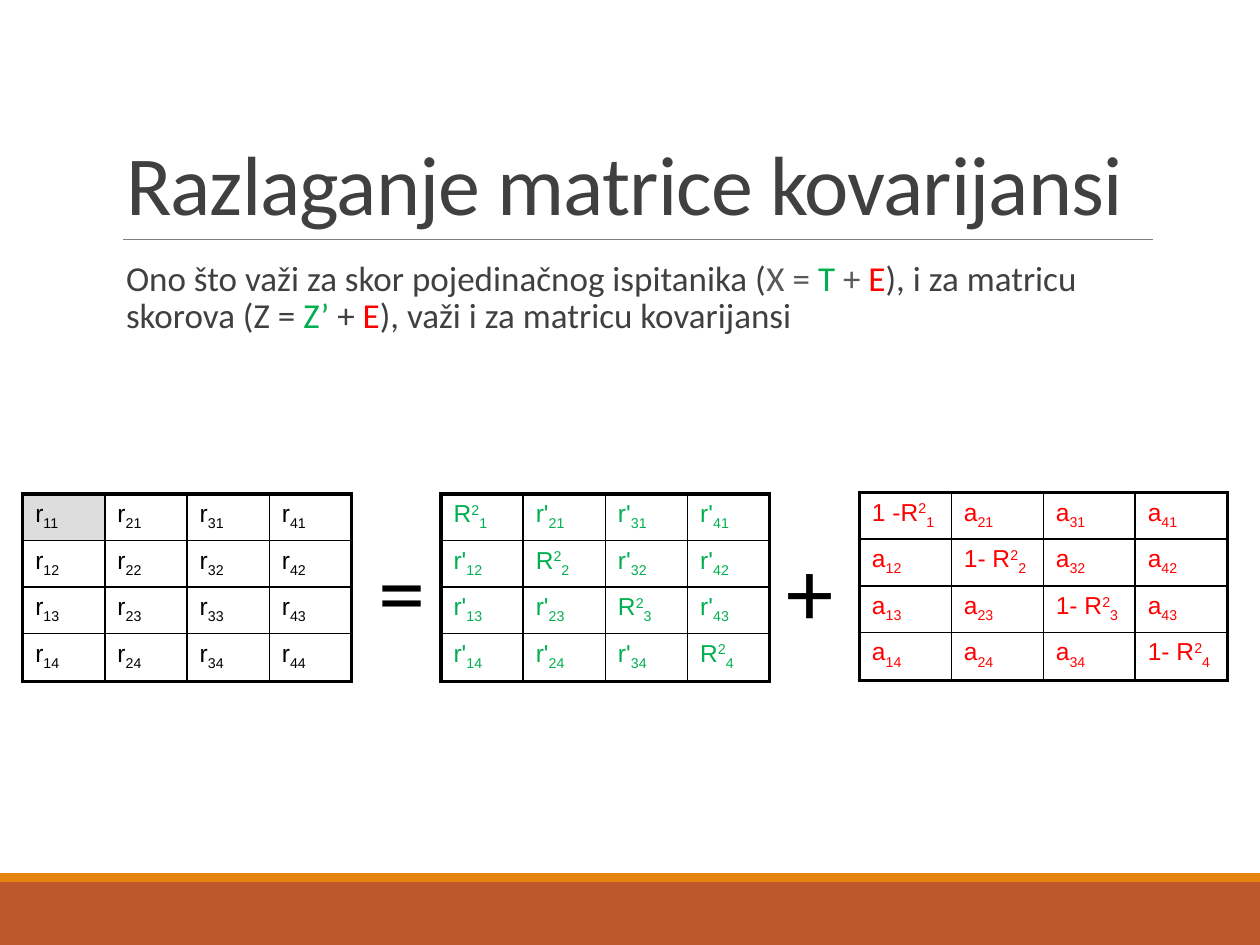
"""Build the slide on splitting a covariance matrix."""
from dataclasses import dataclass

from lxml.etree import SubElement
from pptx import Presentation
from pptx.dml.color import RGBColor
from pptx.enum.shapes import MSO_CONNECTOR, MSO_SHAPE
from pptx.enum.text import MSO_ANCHOR, MSO_AUTO_SIZE, PP_ALIGN
from pptx.oxml.ns import qn
from pptx.slide import Slide
from pptx.util import Inches, Pt


@dataclass(frozen=True)
class Theme:
    dark: str = "404040"
    gray: str = "595959"
    green: str = "00B050"
    red: str = "FF0000"
    black: str = "000000"
    shade: str = "DDDDDD"
    rule: str = "808080"
    rust: str = "BD582C"
    gold: str = "E48312"
    head: int = 48
    body: int = 20
    cell: int = 14
    sign: int = 54
    thin: float = 1
    thick: float = 2.25
    sans: str = "Calibri"
    grid: str = "Arial"


THEME = Theme()


@dataclass(frozen=True)
class Matrix:
    left: float
    top: float
    width: float
    stem: str
    square: str
    color: str
    shaded: bool = False


@dataclass(frozen=True)
class Sign:
    left: float
    text: str


@dataclass(frozen=True)
class Bar:
    top: float
    height: float
    color: str


SIZE = 4
ROWS = (0.37, 0.37, 0.37, 0.38)
GRIDS = (
    Matrix(0.18, 3.92, 2.61, "r", "", THEME.black, True),
    Matrix(3.5, 3.92, 2.61, "r'", "R", THEME.green),
    Matrix(6.82, 3.91, 2.92, "a", "1- R", THEME.red),
)
SIGNS = (Sign(2.9, "="), Sign(6.14, "+"))
BARS = (Bar(7, 0.5, THEME.rust), Bar(6.93, 0.07, THEME.gold))
TITLE = "Razlaganje matrice kovarijansi"
BODY = (
    ("Ono što važi za skor pojedinačnog ispitanika (", THEME.dark),
    ("X = ", THEME.gray),
    ("T", THEME.green),
    (" + ", THEME.gray),
    ("E", THEME.red),
    ("), i za matricu skorova (Z = ", THEME.dark),
    ("Z’ ", THEME.green),
    ("+ ", THEME.dark),
    ("E", THEME.red),
    ("), važi i za matricu kovarijansi", THEME.dark),
)


def apply(item, form: dict) -> None:
    """Set each format value on the item."""
    for name, value in form.items():
        setattr(item, name, value)


def place(shape, left: float, top: float, width: float, height: float) -> None:
    """Move and size a shape, in inches."""
    names = ("left", "top", "width", "height")
    apply(shape, dict(zip(names, map(Inches, (left, top, width, height)))))


def write(para, text: str, face: str, size: int, color: str, **marks: int) -> None:
    """Add a run with its font and any raw text marks."""
    run = para.add_run()
    run.text = text
    apply(run.font, {"name": face, "size": Pt(size), "bold": False})
    run.font.color.rgb = RGBColor.from_string(color)
    for name, value in marks.items():
        run._r.get_or_add_rPr().set(name, str(value))


def add_bar(slide: Slide, bar: Bar) -> None:
    """Draw a full-width footer bar."""
    shape = slide.shapes.add_shape(
        MSO_SHAPE.RECTANGLE, 0, Inches(bar.top), Inches(10), Inches(bar.height))
    shape.shadow.inherit = False
    shape.fill.solid()
    shape.fill.fore_color.rgb = RGBColor.from_string(bar.color)
    shape.line.fill.background()


def add_rule(slide: Slide) -> None:
    """Draw the line below the title."""
    line = slide.shapes.add_connector(
        MSO_CONNECTOR.STRAIGHT, Inches(0.98), Inches(1.9), Inches(9.15), Inches(1.9))
    line.line.width = Pt(0.5)
    line.line.color.rgb = RGBColor.from_string(THEME.rule)
    SubElement(line._element.spPr, qn("a:effectLst"))


def fill_title(slide: Slide) -> None:
    """Place and write the title."""
    shape = slide.shapes.title
    place(shape, 0.9, 0.31, 8.25, 1.59)
    apply(shape.text_frame, {"vertical_anchor": MSO_ANCHOR.BOTTOM,
                             "auto_size": MSO_AUTO_SIZE.NONE})
    para = shape.text_frame.paragraphs[0]
    apply(para, {"alignment": PP_ALIGN.LEFT, "line_spacing": 0.85,
                 "space_before": Pt(0)})
    write(para, TITLE, THEME.sans, THEME.head, THEME.dark, spc=-50)


def fill_body(slide: Slide) -> None:
    """Place and write the body text."""
    shape = slide.placeholders[1]
    place(shape, 0.9, 2.02, 8.25, 4.4)
    apply(shape.text_frame, {"margin_left": 0, "margin_right": 0,
                             "auto_size": MSO_AUTO_SIZE.NONE})
    para = shape.text_frame.paragraphs[0]
    props = para._p.get_or_add_pPr()
    props.set("marL", str(Inches(0.1)))
    props.set("indent", str(Inches(-0.1)))
    tint = SubElement(props, qn("a:buClr"))
    SubElement(tint, qn("a:srgbClr"), val=THEME.gold)
    SubElement(props, qn("a:buChar"), char=" ")
    apply(para, {"line_spacing": 0.9, "space_before": Pt(0), "space_after": Pt(2)})
    for text, color in BODY:
        write(para, text, THEME.sans, THEME.body, color)


def edge(cell, row: int, col: int) -> None:
    """Give a cell thick outer and thin inner borders."""
    last = SIZE - 1
    outer = {"L": col == 0, "R": col == last, "T": row == 0, "B": row == last}
    for side, heavy in outer.items():
        width = Pt(THEME.thick if heavy else THEME.thin)
        line = SubElement(cell._tc.get_or_add_tcPr(), qn(f"a:ln{side}"), w=str(width))
        fill = SubElement(line, qn("a:solidFill"))
        SubElement(fill, qn("a:srgbClr"), val=THEME.black)


def fill_cell(cell, grid: Matrix, row: int, col: int) -> None:
    """Write one matrix entry with its raised and lowered digits."""
    edge(cell, row, col)
    if grid.shaded and row == col == 0:
        cell.fill.solid()
        cell.fill.fore_color.rgb = RGBColor.from_string(THEME.shade)
    else:
        cell.fill.background()
    parts = [(grid.stem, 0), (f"{col + 1}{row + 1}", -25000)]
    if grid.square and row == col:
        stem = grid.square if row else grid.square.replace("- ", " -")
        parts = [(stem, 0), ("2", 30000), (f"{row + 1}", -25000)]
    for text, shift in parts:
        write(cell.text_frame.paragraphs[0], text, THEME.grid, THEME.cell,
              grid.color, baseline=shift)


def add_grid(slide: Slide, grid: Matrix) -> None:
    """Draw one square matrix as a table."""
    table = slide.shapes.add_table(
        SIZE, SIZE, Inches(grid.left), Inches(grid.top),
        Inches(grid.width), Inches(sum(ROWS))).table
    apply(table, {"first_row": False, "horz_banding": False})
    for row, height in enumerate(ROWS):
        table.rows[row].height = Inches(height)
        table.columns[row].width = Inches(grid.width / SIZE)
        for col in range(SIZE):
            fill_cell(table.cell(row, col), grid, row, col)


def add_sign(slide: Slide, sign: Sign) -> None:
    """Write the sign between two matrices."""
    box = slide.shapes.add_textbox(
        Inches(sign.left), Inches(4.17), Inches(0.58), Inches(1.01))
    apply(box.text_frame, {"word_wrap": False,
                           "auto_size": MSO_AUTO_SIZE.SHAPE_TO_FIT_TEXT})
    para = box.text_frame.paragraphs[0]
    para.alignment = PP_ALIGN.CENTER
    write(para, sign.text, THEME.sans, THEME.sign, THEME.black)


def main() -> None:
    """Build and save the slide."""
    deck = Presentation()
    apply(deck, {"slide_width": Inches(10), "slide_height": Inches(7.5)})
    slide = deck.slides.add_slide(deck.slide_layouts[1])
    for bar in BARS:
        add_bar(slide, bar)
    add_rule(slide)
    fill_title(slide)
    fill_body(slide)
    for grid in GRIDS:
        add_grid(slide, grid)
    for sign in SIGNS:
        add_sign(slide, sign)
    deck.save("out.pptx")


if __name__ == "__main__":
    main()
